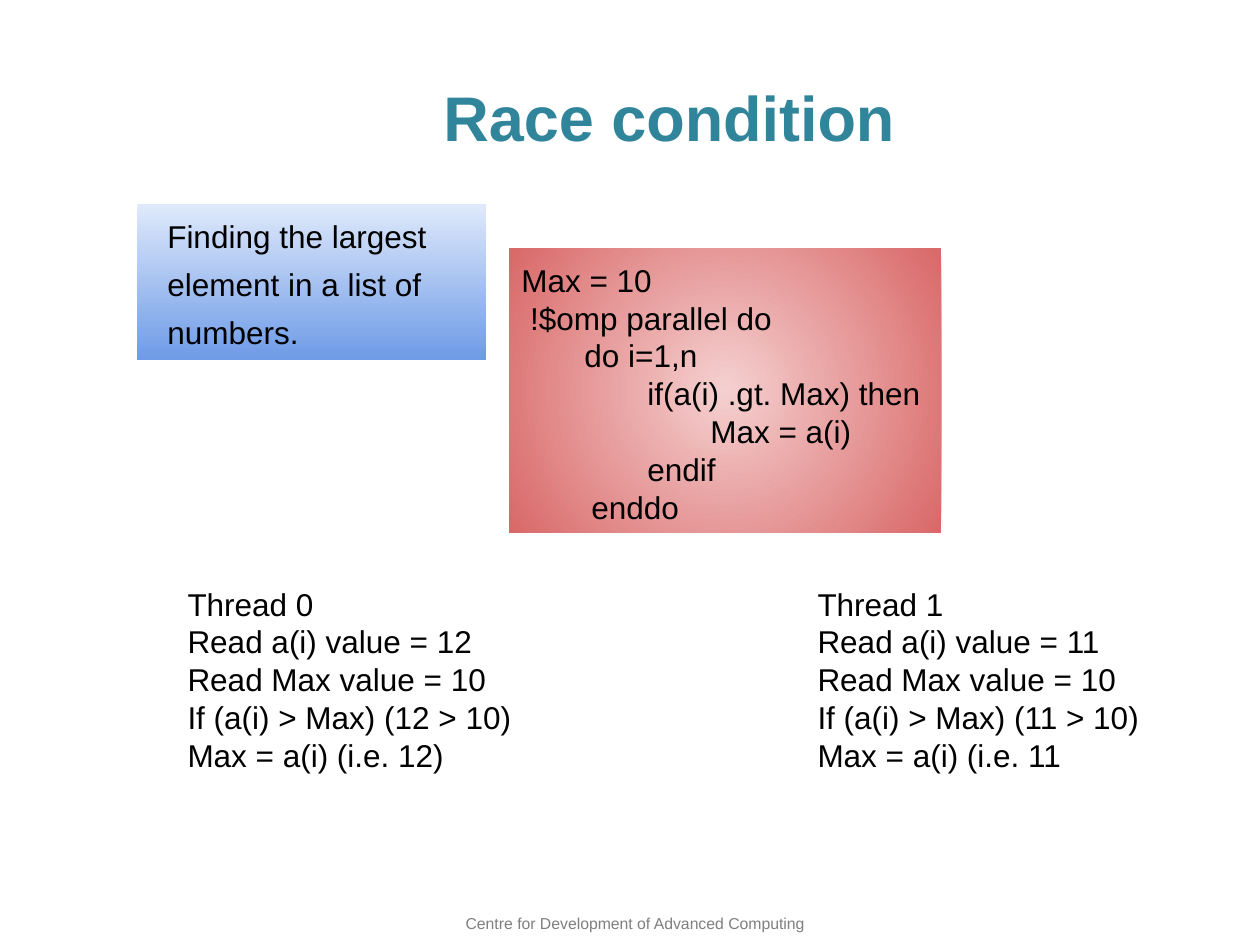
from lxml import etree
from pptx import Presentation
from pptx.dml.color import RGBColor
from pptx.enum.shapes import MSO_SHAPE
from pptx.enum.text import MSO_ANCHOR, PP_ALIGN
from pptx.oxml.ns import qn
from pptx.util import Inches, Pt

RECTANGLE = MSO_SHAPE.RECTANGLE
TOP, MIDDLE = MSO_ANCHOR.TOP, MSO_ANCHOR.MIDDLE
LEFT, CENTER = PP_ALIGN.LEFT, PP_ALIGN.CENTER
TITLE_ONLY = 5

COLORS = {
    "title": "31859B", "text": "000000", "footer": "7F7F7F",
    "blue_light": "DFE9FB", "blue_dark": "6E9BE7",
    "red_light": "F5D0D0", "red_dark": "D96868",
}

# Each code line with its left margin and first-line indent in inches
CODE = [
    ("Max = 10", 0, 0),
    (" !$omp parallel do", 0, 0),
    ("do i=1,n", 0, 0.5),
    ("if(a(i) .gt. Max) then", 0.5, 0.5),
    ("Max = a(i)", 1, 0.5),
    ("endif", 1, 0),
    ("        enddo", 0, 0),
]
GOAL = ["Finding the largest", "element in a list of", "numbers."]
THREADS = [
    ["Thread 0", "Read a(i) value = 12", "Read Max value = 10",
     "If (a(i) > Max) (12 > 10)", "Max = a(i) (i.e. 12)"],
    ["Thread 1", "Read a(i) value = 11", "Read Max value = 10",
     "If (a(i) > Max) (11 > 10)", "Max = a(i) (i.e. 11"],
]


def set_frame(frame, anchor=TOP, inset=0.1):
    frame.word_wrap = True
    frame.vertical_anchor = anchor
    frame.margin_left = frame.margin_right = Inches(0.1)
    frame.margin_top = frame.margin_bottom = Inches(inset)


def add_line(frame, text, size=18, color="text", bold=False, align=LEFT,
             margin=0, indent=0, before=0, after=0, spacing=21.6):
    """Write text into the empty first paragraph, or into a new one."""
    para = frame.paragraphs[0]
    if para.runs:
        para = frame.add_paragraph()
    properties = para._p.get_or_add_pPr()
    properties.set("marL", str(Inches(margin)))
    properties.set("indent", str(Inches(indent)))
    para.alignment = align
    para.space_before, para.space_after = Pt(before), Pt(after)
    para.line_spacing = Pt(spacing) if spacing else None
    span = para.add_run()
    span.text = text
    span.font.name, span.font.size, span.font.bold = "Arial", Pt(size), bold
    span.font.color.rgb = RGBColor.from_string(COLORS[color])


def add_gradient_box(page, left, top, width, height, colors, radial=False):
    box = page.shapes.add_shape(RECTANGLE, left, top, width, height)
    box.shadow.inherit = False
    box.line.fill.background()
    box.fill.gradient()
    box.fill.gradient_angle = 270
    for stop, color in zip(box.fill.gradient_stops, colors):
        stop.color.rgb = RGBColor.from_string(COLORS[color])
    if radial:
        gradient = box._element.spPr.find(qn("a:gradFill"))
        gradient.remove(gradient.find(qn("a:lin")))
        path = etree.SubElement(gradient, qn("a:path"), {"path": "circle"})
        center = dict.fromkeys("ltrb", "50000")
        etree.SubElement(path, qn("a:fillToRect"), center)
    set_frame(box.text_frame)
    return box.text_frame


def add_text_box(page, left, top, width, height, inset=0.1):
    box = page.shapes.add_textbox(left, top, width, height)
    set_frame(box.text_frame, inset=inset)
    return box.text_frame


def place_title(page, left, top, width, height):
    title = page.shapes.title
    title.left, title.top, title.width, title.height = left, top, width, height
    set_frame(title.text_frame, MIDDLE)
    add_line(title.text_frame, "Race condition ", size=36, color="title",
             bold=True, align=CENTER, spacing=None)


def add_goal(page, left, top, width, height):
    frame = add_gradient_box(page, left, top, width, height,
                             ("blue_light", "blue_dark"))
    for text in GOAL:
        add_line(frame, text, margin=0.38, indent=-0.24,
                 before=0 if text == GOAL[0] else 6)


def add_code(page, left, top, width, height):
    frame = add_gradient_box(page, left, top, width, height,
                             ("red_light", "red_dark"), radial=True)
    for text, margin, indent in CODE:
        add_line(frame, text, margin=margin, indent=indent)


def add_threads(page, left, top, width, height, pitch):
    for index, lines in enumerate(THREADS):
        frame = add_text_box(page, left + index * pitch, top, width, height)
        for text in lines:
            add_line(frame, text)


def add_footer(page, left, top, width, height):
    frame = add_text_box(page, left, top, width, height, inset=0.05)
    add_line(frame, "Centre for Development of Advanced Computing", size=9,
             color="footer", align=CENTER, spacing=None)


def main():
    deck = Presentation()
    deck.slide_width, deck.slide_height = Inches(10), Inches(7.5)
    page = deck.slides.add_slide(deck.slide_layouts[TITLE_ONLY])
    add_footer(page, Inches(3.27), Inches(7.2), Inches(3.54), Inches(0.25))
    place_title(page, Inches(1.16), Inches(0.17), Inches(8.44), Inches(1.5))
    add_goal(page, Inches(1.09), Inches(1.62), Inches(2.77), Inches(1.24))
    add_code(page, Inches(4.04), Inches(1.97), Inches(3.43), Inches(2.26))
    add_threads(page, Inches(1.39), Inches(4.54), Inches(3.3), Inches(2.12),
                pitch=Inches(5))
    deck.save("out.pptx")


if __name__ == "__main__":
    main()
